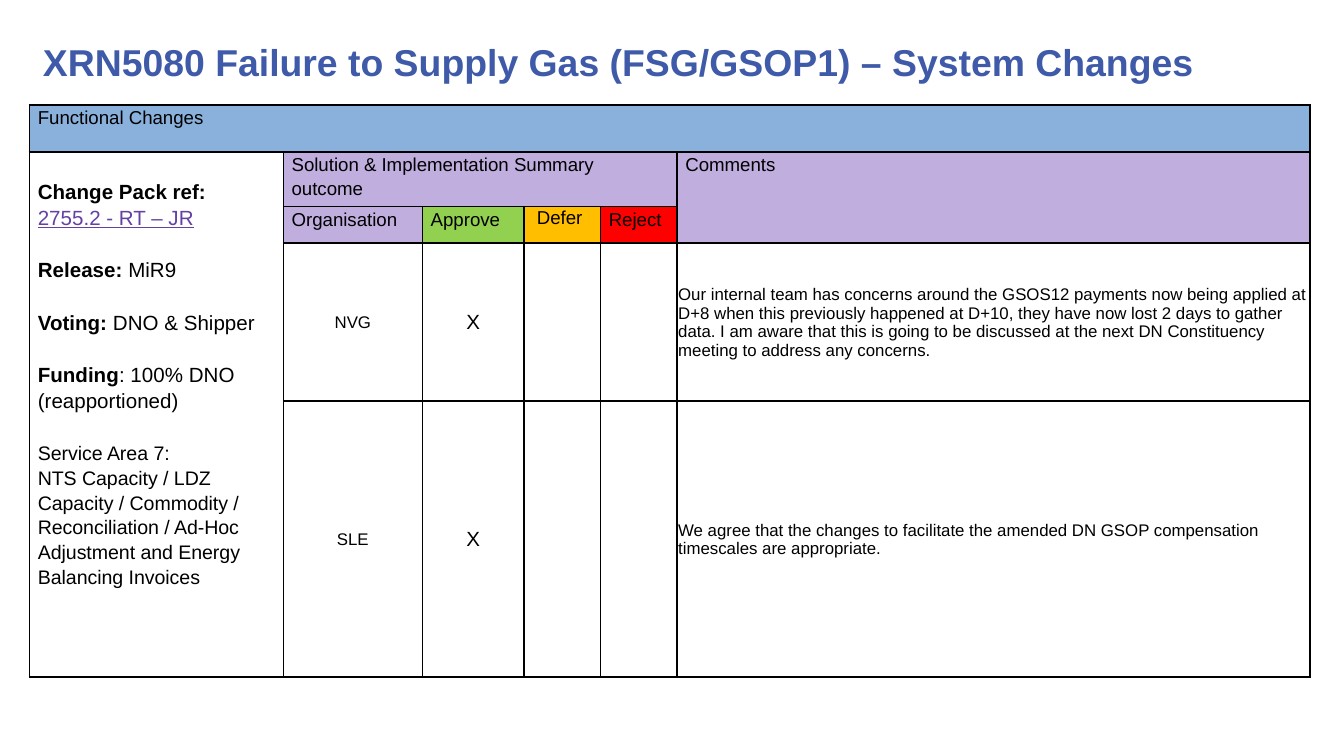
from dataclasses import dataclass

from lxml.etree import SubElement
from pptx import Presentation
from pptx.dml.color import RGBColor
from pptx.enum.text import MSO_ANCHOR as Anchor, MSO_AUTO_SIZE as AutoSize, PP_ALIGN as Align
from pptx.oxml.ns import qn
from pptx.util import Pt


@dataclass(frozen=True)
class Theme:
    font: str = "Arial"
    title: str = "3E5AA8"
    text: str = "000000"
    link: str = "6440A3"
    banner: str = "89B1DC"
    heading: str = "C0AEDF"
    approve: str = "92D050"
    defer: str = "FFBF00"
    reject: str = "FF0000"
    title_size: float = 20
    heading_size: float = 10
    detail_size: float = 11
    service_size: float = 10.5
    vote_size: float = 9
    mark_size: float = 11
    line_spacing: float = 1.15


THEME = Theme()
COLUMN_WIDTHS = [136, 74.5, 54.4, 41, 41.1, 339]
ROW_HEIGHTS = [25.2, 29.3, 19.5, 84.8, 147.7]
HEADING_INSETS = (4.5, 0, 4.5, 0)
VOTE_INSETS = (0.6, 0.6, 0.6, 0)
DETAIL_INSETS = (4.5, 13.5, 4.5, 0)
DETAIL_GAP = 14

# Row, column, text, fill
HEADINGS = [
    (0, 0, "Functional Changes", THEME.banner),
    (1, 1, "Solution & Implementation Summary outcome", THEME.heading),
    (1, 5, "Comments", THEME.heading),
    (2, 1, "Organisation", THEME.heading),
    (2, 2, "Approve", THEME.approve),
    (2, 4, "Reject", THEME.reject),
]
# First row, first column, last row, last column
MERGES = [(0, 0, 0, 5), (1, 0, 4, 0), (1, 1, 1, 4), (1, 5, 2, 5)]
# Bold label, plain text, starts a new group
DETAILS = [
    ("Change Pack ref:", "", False),
    ("", "2755.2 - RT – JR", False),
    ("Release: ", "MiR9", True),
    ("Voting: ", "DNO & Shipper", True),
    ("Funding", ": 100% DNO (reapportioned)", True),
    ("", "Service Area 7:", True),
    ("", "NTS Capacity / LDZ Capacity / Commodity / Reconciliation / Ad-Hoc "
         "Adjustment and Energy Balancing Invoices", False),
]
LINK_LINE = 1
SERVICE_LINE = 5
VOTES = [
    ("NVG", "Our internal team has concerns around the GSOS12 payments now being applied at "
            "D+8 when this previously happened at D+10, they have now lost 2 days to gather "
            "data. I am aware that this is going to be discussed at the next DN Constituency "
            "meeting to address any concerns."),
    ("SLE", "We agree that the changes to facilitate the amended DN GSOP compensation "
            "timescales are appropriate."),
]


def set_font(paragraph, size, color=THEME.text, bold=False):
    font = paragraph.font
    font.name, font.size, font.bold = THEME.font, Pt(size), bold
    font.color.rgb = RGBColor.from_string(color)


def set_insets(cell, insets):
    left, top, right, bottom = map(Pt, insets)
    cell.margin_left, cell.margin_top = left, top
    cell.margin_right, cell.margin_bottom = right, bottom


def draw_borders(cell):
    properties = cell._tc.get_or_add_tcPr()
    for position, side in enumerate(("a:lnL", "a:lnR", "a:lnT", "a:lnB")):
        line = properties.makeelement(qn(side), {"w": str(Pt(1))})
        fill = SubElement(line, qn("a:solidFill"))
        SubElement(fill, qn("a:srgbClr"), val=THEME.text)
        properties.insert(position, line)


def fill_cell(cell, text, size, insets, align=Align.LEFT, spacing=1.0, anchor=Anchor.TOP):
    set_insets(cell, insets)
    cell.vertical_anchor = anchor
    paragraph = cell.text_frame.paragraphs[0]
    paragraph.text = text
    paragraph.alignment, paragraph.line_spacing = align, spacing
    set_font(paragraph, size)


def color_cell(cell, color):
    cell.fill.solid()
    cell.fill.fore_color.rgb = RGBColor.from_string(color)


def fill_headings(table):
    for row, column, text, color in HEADINGS:
        cell = table.cell(row, column)
        fill_cell(cell, text, THEME.heading_size, HEADING_INSETS, spacing=THEME.line_spacing)
        color_cell(cell, color)
    defer = table.cell(2, 3)
    fill_cell(defer, "Defer ", THEME.heading_size, VOTE_INSETS, Align.CENTER)
    color_cell(defer, THEME.defer)


def fill_details(cell):
    set_insets(cell, DETAIL_INSETS)
    frame = cell.text_frame
    for index, (label, text, new_group) in enumerate(DETAILS):
        paragraph = frame.add_paragraph() if index else frame.paragraphs[0]
        paragraph.line_spacing = THEME.line_spacing
        if new_group:
            paragraph.space_before = Pt(DETAIL_GAP)
        size = THEME.service_size if index >= SERVICE_LINE else THEME.detail_size
        set_font(paragraph, size, THEME.link if index == LINK_LINE else THEME.text)
        if index == LINK_LINE:
            paragraph.font.underline = True
        for part, bold in ((label, True), (text, False)):
            if part:
                run = paragraph.add_run()
                run.text, run.font.bold = part, bold


def fill_votes(table):
    for row, (organisation, comment) in enumerate(VOTES, start=3):
        for column, text, size, align in (
            (1, organisation, THEME.vote_size, Align.CENTER),
            (2, "X", THEME.mark_size, Align.CENTER),
            (5, comment, THEME.vote_size, Align.LEFT),
        ):
            fill_cell(table.cell(row, column), text, size, VOTE_INSETS, align,
                      anchor=Anchor.MIDDLE)


def add_title(slide, left, top, width, height):
    title = slide.shapes.title
    title.left, title.top, title.width, title.height = map(Pt, (left, top, width, height))
    frame = title.text_frame
    frame.text = "XRN5080 Failure to Supply Gas (FSG/GSOP1) – System Changes"
    frame.word_wrap, frame.auto_size = True, AutoSize.NONE
    frame.vertical_anchor = Anchor.TOP
    paragraph = frame.paragraphs[0]
    paragraph.alignment = Align.LEFT
    set_font(paragraph, THEME.title_size, THEME.title, bold=True)


def add_change_table(slide, left, top):
    box = map(Pt, (left, top, sum(COLUMN_WIDTHS), sum(ROW_HEIGHTS)))
    table = slide.shapes.add_table(len(ROW_HEIGHTS), len(COLUMN_WIDTHS), *box).table
    table.first_row = table.horz_banding = False
    for column, width in zip(table.columns, COLUMN_WIDTHS):
        column.width = Pt(width)
    for row, height in zip(table.rows, ROW_HEIGHTS):
        row.height = Pt(height)
    for cell in table.iter_cells():
        set_insets(cell, VOTE_INSETS)
        cell.fill.background()
        draw_borders(cell)
    for first_row, first_column, last_row, last_column in MERGES:
        table.cell(first_row, first_column).merge(table.cell(last_row, last_column))
    fill_headings(table)
    fill_details(table.cell(1, 0))
    fill_votes(table)


def main():
    presentation = Presentation()
    presentation.slide_width, presentation.slide_height = Pt(720), Pt(405)
    slide = presentation.slides.add_slide(presentation.slide_layouts[5])
    add_title(slide, 15.8, 17.3, 699, 53.3)
    add_change_table(slide, 15.8, 56.2)
    presentation.save("out.pptx")


if __name__ == "__main__":
    main()
